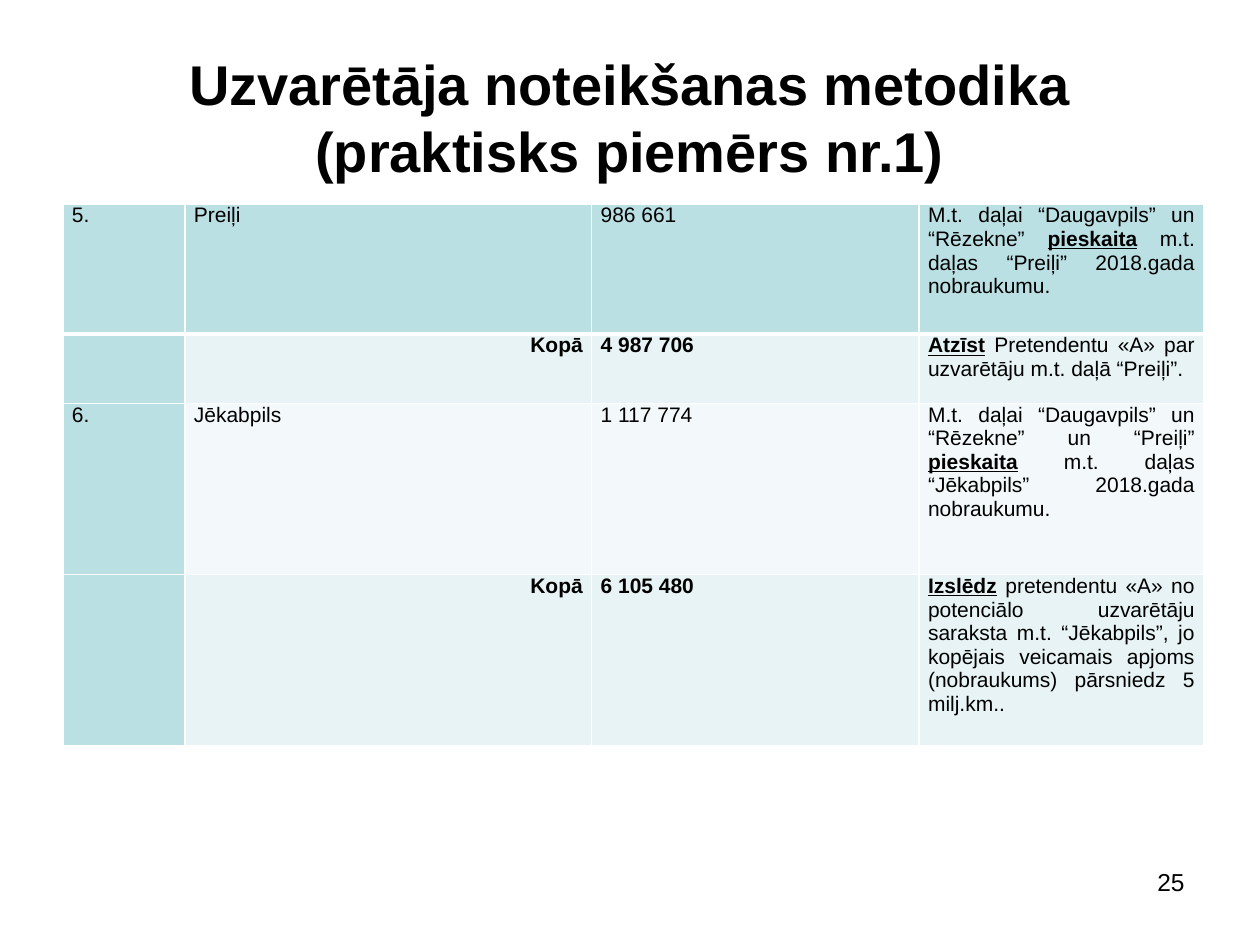
from lxml.etree import SubElement
from pptx import Presentation
from pptx.dml.color import RGBColor
from pptx.enum.text import MSO_ANCHOR, PP_ALIGN
from pptx.oxml.ns import qn
from pptx.util import Cm, Pt

COL_WIDTHS = [2.46, 8.2, 6.6, 5.74]
ROW_HEIGHTS = [2.62, 1.4, 3.45, 3.45]
STRONG, LIGHT, PALE = "BBE0E3", "E7F3F4", "F3F9FA"
ROW_FILLS = [STRONG, LIGHT, PALE, LIGHT]

# Text between asterisks is bold and underlined.
ROWS = [
    ["5.", "Preiļi", "986 661",
     "M.t. daļai “Daugavpils” un “Rēzekne” *pieskaita* m.t. daļas “Preiļi” "
     "2018.gada nobraukumu."],
    ["", "Kopā", "4\u00a0987 706",
     "*Atzīst* Pretendentu «A» par uzvarētāju m.t. daļā “Preiļi”."],
    ["6.", "Jēkabpils", "1\u00a0117 774",
     "M.t. daļai “Daugavpils” un “Rēzekne” un “Preiļi” *pieskaita* m.t. daļas "
     "“Jēkabpils” 2018.gada nobraukumu."],
    ["", "Kopā", "6\u00a0105 480",
     "*Izslēdz* pretendentu «A» no potenciālo uzvarētāju saraksta m.t. "
     "“Jēkabpils”, jo kopējais veicamais apjoms (nobraukums) pārsniedz 5 "
     "milj.km.."],
]


def rgb(color):
    return RGBColor.from_string(color)


def write(tf, text, size=12, bold=False, align=PP_ALIGN.JUSTIFY, color="000000"):
    """Fill the first paragraph; *marked* parts are bold and underlined."""
    tf.word_wrap = True
    p = tf.paragraphs[0]
    p.alignment = align
    p.font.size = Pt(size)
    for i, part in enumerate(text.split("*")):
        if not part:
            continue
        marked = i % 2 == 1
        for j, line in enumerate(part.split("\n")):
            if j:
                p.add_line_break()
            r = p.add_run()
            r.text = line
            r.font.name = "Arial"
            r.font.size = Pt(size)
            r.font.bold = bold or marked
            r.font.underline = marked
            r.font.color.rgb = rgb(color)


def add_text(s, box, text, anchor=MSO_ANCHOR.TOP, **fmt):
    tf = s.shapes.add_textbox(*map(Cm, box)).text_frame
    tf.vertical_anchor = anchor
    write(tf, text, **fmt)


def set_borders(cell, widths, color="FFFFFF"):
    """Draw the left, right, top and bottom borders, in that order."""
    tc_pr = cell._tc.get_or_add_tcPr()
    for i, (side, width) in enumerate(zip(("lnL", "lnR", "lnT", "lnB"), widths)):
        ln = tc_pr.makeelement(qn(f"a:{side}"), {"w": str(Pt(width))})
        fill = SubElement(ln, qn("a:solidFill"))
        SubElement(fill, qn("a:srgbClr"), val=color)
        tc_pr.insert(i, ln)


def add_results_table(s, left, top):
    table = s.shapes.add_table(
        len(ROWS), len(COL_WIDTHS), Cm(left), Cm(top),
        Cm(sum(COL_WIDTHS)), Cm(sum(ROW_HEIGHTS))).table
    for col, width in zip(table.columns, COL_WIDTHS):
        col.width = Cm(width)
    for i, (row, texts) in enumerate(zip(table.rows, ROWS)):
        row.height = Cm(ROW_HEIGHTS[i])
        is_total = texts[1] == "Kopā"
        for j, text in enumerate(texts):
            cell = row.cells[j]
            cell.margin_left = cell.margin_right = Cm(0.18)
            cell.margin_top = cell.margin_bottom = 0
            cell.fill.solid()
            cell.fill.fore_color.rgb = rgb(STRONG if j == 0 else ROW_FILLS[i])
            set_borders(cell, (1, 1, 3 if i == 1 else 1, 3 if i == 0 else 1))
            write(cell.text_frame, text, bold=is_total and j in (1, 2),
                  align=PP_ALIGN.RIGHT if is_total and j == 1
                  else PP_ALIGN.JUSTIFY)


def main():
    prs = Presentation()
    prs.slide_width, prs.slide_height = Cm(25.4), Cm(19.05)
    s = prs.slides.add_slide(prs.slide_layouts[6])
    add_text(s, (1.27, 0.76, 22.86, 3.18),
             "Uzvarētāja noteikšanas metodika\n(praktisks piemērs nr.1)",
             anchor=MSO_ANCHOR.MIDDLE, size=32, bold=True, align=PP_ALIGN.CENTER)
    add_results_table(s, 1.27, 4.11)
    add_text(s, (18.21, 17.35, 5.92, 1.32), "25", size=14, align=PP_ALIGN.RIGHT)
    prs.save("out.pptx")


if __name__ == "__main__":
    main()
